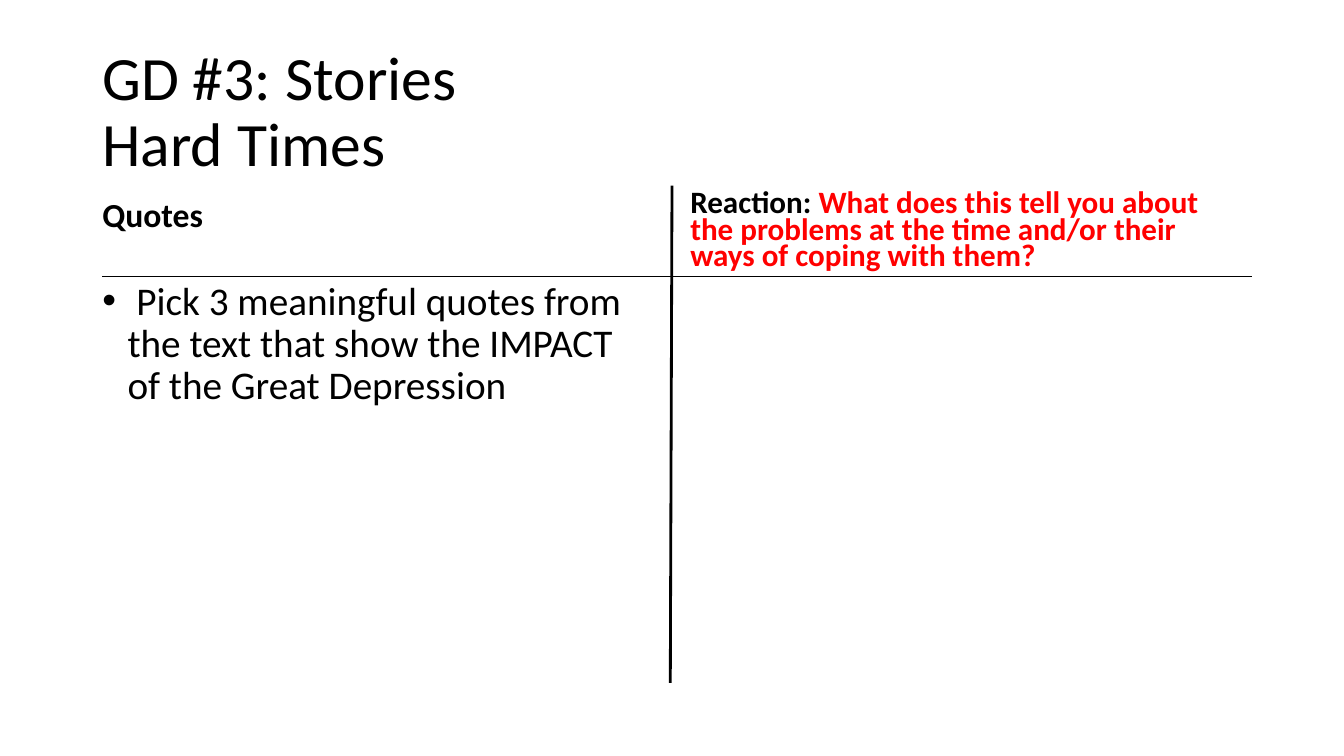
from dataclasses import dataclass
from lxml.etree import SubElement
from pptx import Presentation
from pptx.dml.color import RGBColor
from pptx.enum.shapes import MSO_CONNECTOR
from pptx.enum.text import MSO_ANCHOR
from pptx.oxml.ns import qn
from pptx.util import Inches, Pt


@dataclass(frozen=True)
class Theme:
    font: str = "Calibri"
    ink: str = "000000"
    red: str = "FF0000"
    title: float = 44
    head: float = 24
    prompt: float = 22.2
    body: float = 28
    thick: float = 2
    thin: float = 0.5


THEME = Theme()
COLS, ROWS = 160, 90
WIDE, HIGH = Inches(13.33), Inches(7.5)
LEFT, MID, RIGHT = 11, 81, 149
TOP, RULE, BASE = 22.1, 32.9, 81.3
HALF = 67.7


def across(cols):
    return round(WIDE * cols / COLS)


def down(rows):
    return round(HIGH * rows / ROWS)


def add_text(slide, area, lines, size, bold=False, anchor=MSO_ANCHOR.TOP, gap=0.9, foot=0.6):
    left, top, width, height = area
    box = slide.shapes.add_textbox(across(left), down(top), across(width), down(height))
    frame = box.text_frame
    frame.word_wrap = True
    frame.vertical_anchor = anchor
    frame.margin_bottom = down(foot)
    para = frame.paragraphs[0]
    para.line_spacing = gap
    for row, runs in enumerate(lines):
        if row:
            para.add_line_break()
        for text, color in runs:
            run = para.add_run()
            run.text = text
            font = run.font
            font.name = THEME.font
            font.size = Pt(size)
            font.bold = bold
            font.color.rgb = RGBColor.from_string(color)
    return para


def add_bullet(para):
    props = para._p.get_or_add_pPr()
    props.set("marL", str(Inches(0.25)))
    props.set("indent", str(-Inches(0.25)))
    SubElement(props, qn("a:buFont")).set("typeface", "Arial")
    SubElement(props, qn("a:buChar")).set("char", "•")


def add_rule(slide, start, end, weight):
    line = slide.shapes.add_connector(
        MSO_CONNECTOR.STRAIGHT,
        across(start[0]), down(start[1]), across(end[0]), down(end[1]),
    )
    line.line.color.rgb = RGBColor.from_string(THEME.ink)
    line.line.width = Pt(weight)
    SubElement(line._element.spPr, qn("a:effectLst"))


def main():
    deck = Presentation()
    deck.slide_width, deck.slide_height = WIDE, HIGH
    slide = deck.slides.add_slide(deck.slide_layouts[6])
    ink, red = THEME.ink, THEME.red

    add_text(slide, (LEFT, 4.8, RIGHT - LEFT, 17.4),
             [[("GD #3: Stories ", ink)], [("Hard Times", ink)]],
             THEME.title, anchor=MSO_ANCHOR.MIDDLE)
    add_text(slide, (LEFT, TOP, HALF, RULE - TOP), [[("Quotes", ink)]],
             THEME.head, bold=True, anchor=MSO_ANCHOR.BOTTOM, foot=5)
    task = add_text(slide, (LEFT, RULE, HALF, BASE - RULE),
                    [[(" Pick 3 meaningful quotes from the text that show "
                       "the IMPACT of the Great Depression", ink)]],
                    THEME.body)
    add_bullet(task)
    add_text(slide, (MID, TOP, RIGHT - MID, RULE - TOP),
             [[("Reaction: ", ink),
               ("What does this tell you about the problems at the time "
                "and/or their ways of coping with them?", red)]],
             THEME.prompt, bold=True, anchor=MSO_ANCHOR.BOTTOM, gap=0.7)

    add_rule(slide, (80, TOP), (79.8, BASE), THEME.thick)
    add_rule(slide, (12.2, RULE), (RIGHT, RULE), THEME.thin)
    deck.save("out.pptx")


if __name__ == "__main__":
    main()
